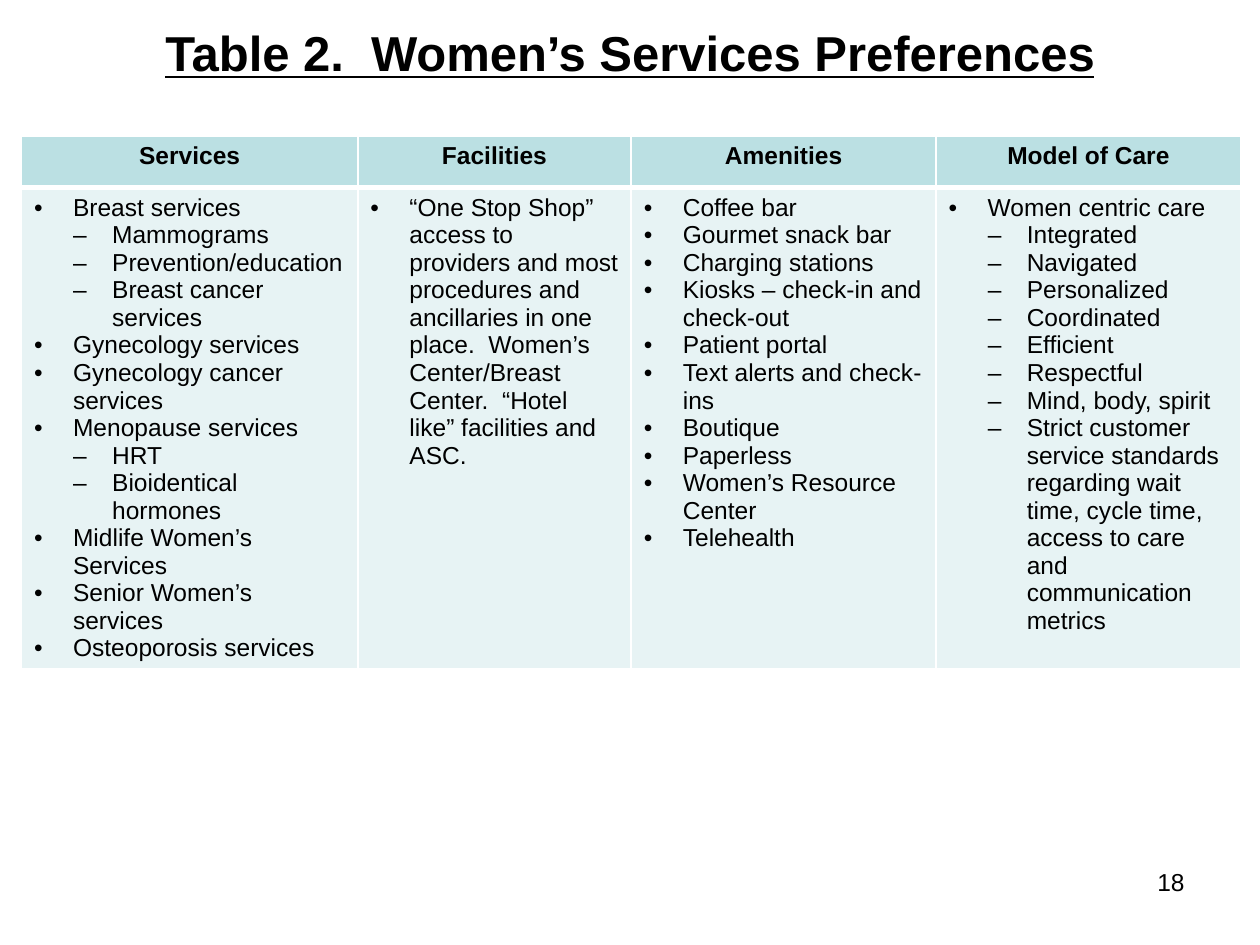
from lxml import etree
from pptx import Presentation
from pptx.dml.color import RGBColor
from pptx.enum.text import MSO_ANCHOR, PP_ALIGN
from pptx.oxml.ns import qn
from pptx.util import Inches, Pt

CENTER, RIGHT = PP_ALIGN.CENTER, PP_ALIGN.RIGHT
MIDDLE = MSO_ANCHOR.MIDDLE

# Content: each column is a heading and its (level, text) items
TITLE = "Table 2.  Women’s Services Preferences"
PAGE_NUMBER = "18"
COLUMNS = [
    ("Services", 2.67, [
        (0, "Breast services"),
        (1, "Mammograms"),
        (1, "Prevention/education"),
        (1, "Breast cancer services"),
        (0, "Gynecology services"),
        (0, "Gynecology cancer services"),
        (0, "Menopause services"),
        (1, "HRT"),
        (1, "Bioidentical hormones"),
        (0, "Midlife Women’s Services"),
        (0, "Senior Women’s services"),
        (0, "Osteoporosis services"),
    ]),
    ("Facilities", 2.17, [
        (0, "“One Stop Shop” access to providers and most procedures and "
            "ancillaries in one place.  Women’s Center/Breast Center.  "
            "“Hotel like” facilities and ASC."),
    ]),
    ("Amenities", 2.42, [
        (0, "Coffee bar"),
        (0, "Gourmet snack bar"),
        (0, "Charging stations"),
        (0, "Kiosks – check-in and check-out"),
        (0, "Patient portal"),
        (0, "Text alerts and check-ins"),
        (0, "Boutique"),
        (0, "Paperless"),
        (0, "Women’s Resource Center"),
        (0, "Telehealth"),
    ]),
    ("Model of Care", 2.42, [
        (0, "Women centric care"),
        (1, "Integrated"),
        (1, "Navigated"),
        (1, "Personalized"),
        (1, "Coordinated"),
        (1, "Efficient"),
        (1, "Respectful"),
        (1, "Mind, body, spirit"),
        (1, "Strict customer service standards regarding wait time, cycle "
            "time, access to care and communication metrics"),
    ]),
]

THEME = {
    "header_fill": "BBE0E3",
    "body_fill": "E7F3F4",
    "border": "FFFFFF",
    "text": RGBColor(0, 0, 0),
    "font": "Arial",
    "title_size": Pt(28),
    "text_size": Pt(14),
}
BULLETS = ("•", "‒")
INDENT = 0.31
ROW_HEIGHTS = (0.41, 3.81)
HEADER_BORDERS = {"L": 1, "R": 1, "T": 1, "B": 3}
BODY_BORDERS = {"L": 1, "R": 1, "T": 3, "B": 1}


def format_font(font, size=THEME["text_size"], **extra):
    values = {"name": THEME["font"], "size": size, "bold": False, **extra}
    for name, value in values.items():
        setattr(font, name, value)
    font.color.rgb = THEME["text"]


def write(paragraph, text, align=None, **font_values):
    run = paragraph.add_run()
    run.text = text
    paragraph.alignment = align
    format_font(run.font, **font_values)


def add_bullet(paragraph, level):
    paragraph.level = level
    properties = paragraph._p.get_or_add_pPr()
    properties.set("marL", str(Inches(INDENT * (level + 1))))
    properties.set("indent", str(Inches(-INDENT)))
    etree.SubElement(properties, qn("a:buFont"), typeface=THEME["font"])
    etree.SubElement(properties, qn("a:buChar"), char=BULLETS[level])


def format_cell(cell, fill, borders):
    properties = cell._tc.get_or_add_tcPr()
    for side, width in borders.items():
        line = etree.SubElement(properties, qn(f"a:ln{side}"), w=str(Pt(width)))
        solid = etree.SubElement(line, qn("a:solidFill"))
        etree.SubElement(solid, qn("a:srgbClr"), val=THEME["border"])
    cell.fill.solid()
    cell.fill.fore_color.rgb = RGBColor.from_string(fill)


presentation = Presentation()
presentation.slide_width, presentation.slide_height = Inches(10), Inches(7.5)
slide = presentation.slides.add_slide(presentation.slide_layouts[5])

# Title
title = slide.shapes.title
title.left, title.top = Inches(0.5), Inches(0)
title.width, title.height = Inches(9), Inches(0.83)
title.text_frame.vertical_anchor = MIDDLE
write(title.text_frame.paragraphs[0], TITLE, CENTER,
      size=THEME["title_size"], bold=True, underline=True)

# Preferences table
preferences = slide.shapes.add_table(
    len(ROW_HEIGHTS), len(COLUMNS), Inches(0.17), Inches(1.08),
    Inches(sum(width for _, width, _ in COLUMNS)), Inches(sum(ROW_HEIGHTS))).table
for row, height in zip(preferences.rows, ROW_HEIGHTS):
    row.height = Inches(height)

for column, (heading, width, items) in enumerate(COLUMNS):
    preferences.columns[column].width = Inches(width)

    header = preferences.cell(0, column)
    format_cell(header, THEME["header_fill"], HEADER_BORDERS)
    write(header.text_frame.paragraphs[0], heading, CENTER, bold=True)

    body = preferences.cell(1, column)
    format_cell(body, THEME["body_fill"], BODY_BORDERS)
    for index, (level, text) in enumerate(items):
        frame = body.text_frame
        paragraph = frame.add_paragraph() if index else frame.paragraphs[0]
        add_bullet(paragraph, level)
        write(paragraph, text)

# Page number
page_number = slide.shapes.add_textbox(
    Inches(7.17), Inches(6.83), Inches(2.33), Inches(0.52))
page_number.text_frame.word_wrap = True
write(page_number.text_frame.paragraphs[0], PAGE_NUMBER, RIGHT)

presentation.save("out.pptx")
